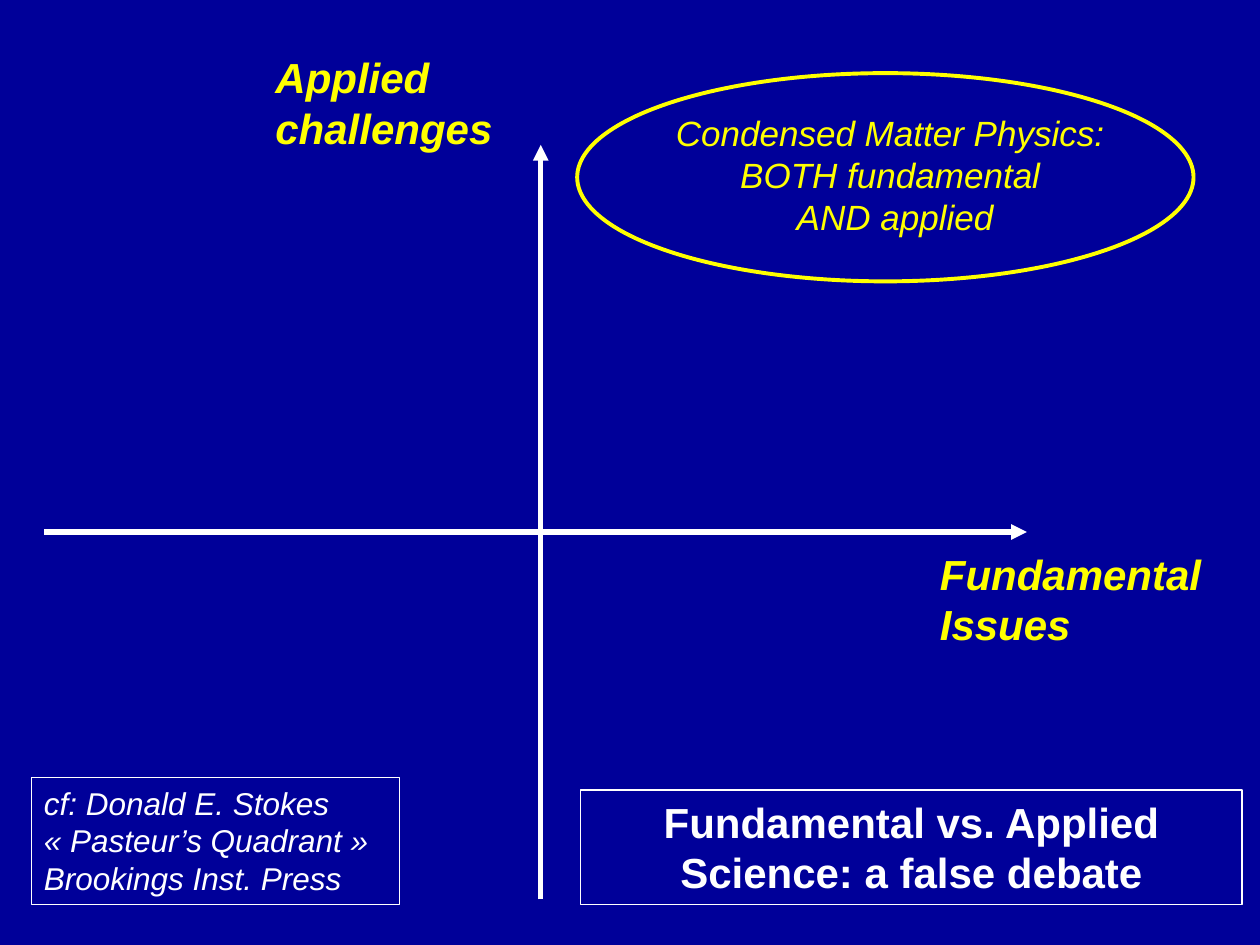
import pptx
import pptx.dml.color
import pptx.enum.shapes
import pptx.enum.text
import pptx.oxml
import pptx.oxml.ns
import pptx.util
from pptx.util import Pt

NAVY = pptx.dml.color.RGBColor(0x00, 0x00, 0x99)
YELLOW = pptx.dml.color.RGBColor(0xFF, 0xFF, 0x00)
WHITE = pptx.dml.color.RGBColor(0xFF, 0xFF, 0xFF)

SHAPES = pptx.enum.shapes.MSO_SHAPE
LEFT = pptx.enum.text.PP_ALIGN.LEFT
CENTER = pptx.enum.text.PP_ALIGN.CENTER


def add_axis(slide, start, end):
    """Draw a white line with an arrowhead at its end."""
    axis = slide.shapes.add_connector(
        pptx.enum.shapes.MSO_CONNECTOR.STRAIGHT,
        *[Pt(value) for value in (*start, *end)])
    axis.line.color.rgb = WHITE
    axis.line.width = Pt(3)
    arrowhead = pptx.oxml.parse_xml(
        f'<a:tailEnd {pptx.oxml.ns.nsdecls("a")} type="triangle"/>')
    axis.line._get_or_add_ln().append(arrowhead)
    properties = axis._element.spPr
    properties.append(properties.makeelement(pptx.oxml.ns.qn("a:effectLst"), {}))


def write_lines(holder, lines, size, color, bold=False, italic=False,
                align=LEFT, wrap=True):
    frame = holder.text_frame
    frame.word_wrap = wrap
    frame.auto_size = pptx.enum.text.MSO_AUTO_SIZE.SHAPE_TO_FIT_TEXT
    frame.vertical_anchor = pptx.enum.text.MSO_ANCHOR.TOP
    for index, line in enumerate(lines):
        paragraph = frame.add_paragraph() if index else frame.paragraphs[0]
        paragraph.alignment = align
        run = paragraph.add_run()
        run.text = line
        run.font.name = "Arial"
        run.font.size = Pt(size)
        run.font.bold = bold
        run.font.italic = italic
        run.font.color.rgb = color


def add_label(slide, box, lines, size, **style):
    label = slide.shapes.add_textbox(*[Pt(value) for value in box])
    write_lines(label, lines, size, YELLOW, italic=True, **style)


def add_outline(slide, kind, box, color, width):
    """Add an unfilled shape with a coloured border."""
    outline = slide.shapes.add_shape(kind, *[Pt(value) for value in box])
    outline.shadow.inherit = False
    outline.fill.background()
    outline.line.color.rgb = color
    outline.line.width = Pt(width)
    return outline


def main():
    deck = pptx.Presentation()
    deck.slide_width, deck.slide_height = Pt(720), Pt(540)
    slide = deck.slides.add_slide(deck.slide_layouts[6])
    slide.background.fill.solid()
    slide.background.fill.fore_color.rgb = NAVY

    add_axis(slide, (25.2, 304), (586.8, 304))
    add_axis(slide, (309, 514), (309, 82.8))
    add_label(slide, (530, 309.6, 171.4, 65.5), ["Fundamental", "Issues"],
              24, bold=True, wrap=False)
    add_label(slide, (150.3, 26, 145.4, 65.5), ["Applied", "challenges"],
              24, bold=True, wrap=False)

    citation = add_outline(slide, SHAPES.RECTANGLE, (18, 444.2, 210.2, 72.7),
                           WHITE, 0.75)
    write_lines(citation, ["cf: Donald E. Stokes", "« Pasteur’s Quadrant »",
                           "Brookings Inst. Press"], 18, WHITE, italic=True)

    add_label(slide, (324, 60, 375, 80),
              ["Condensed Matter Physics: ", "BOTH fundamental ", "AND applied"],
              20, align=CENTER)
    add_outline(slide, SHAPES.OVAL, (329.8, 41.8, 352.2, 119), YELLOW, 2.25)

    conclusion = add_outline(slide, SHAPES.RECTANGLE, (331.8, 451.4, 378, 65.5),
                             WHITE, 0.75)
    write_lines(conclusion, ["Fundamental vs. Applied Science: a false debate"],
                24, WHITE, bold=True, align=CENTER)

    deck.save("out.pptx")


if __name__ == "__main__":
    main()
